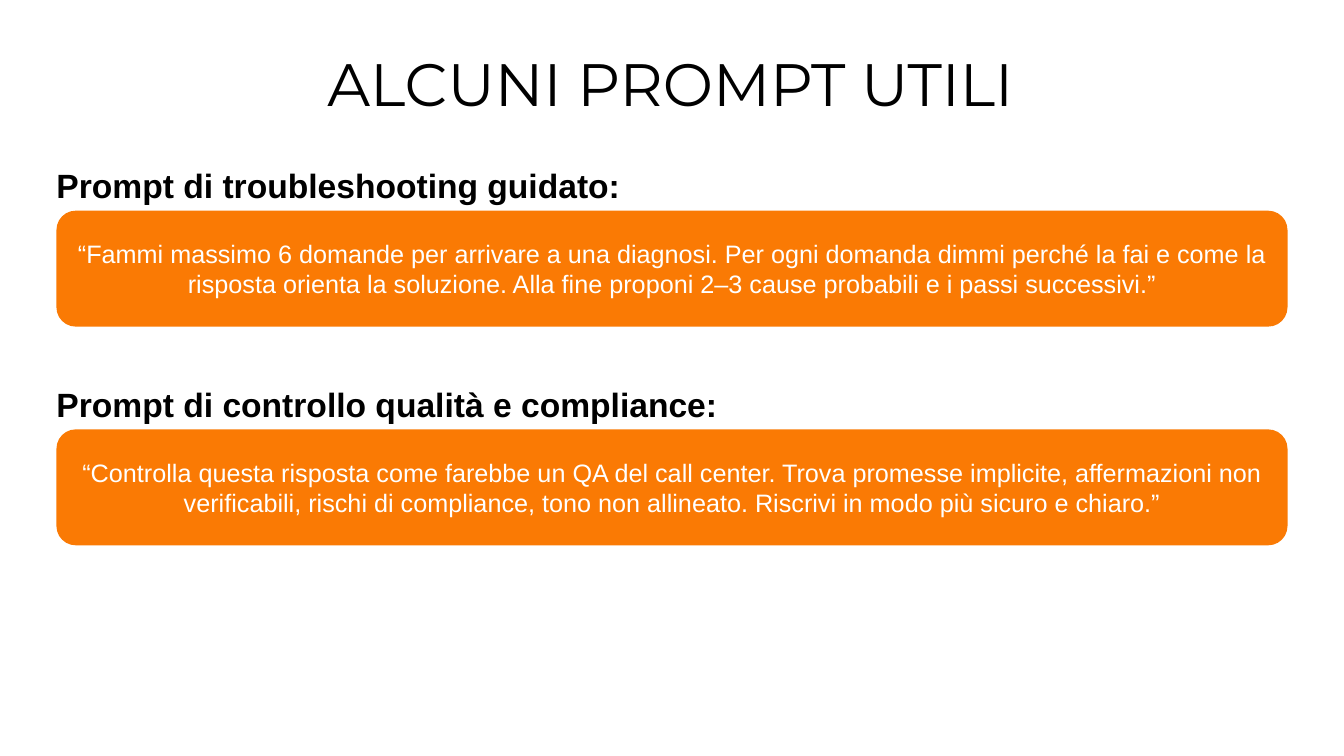
"""Build a slide with two useful prompts, each a heading above a rounded panel."""
import dataclasses

import pptx
import pptx.dml.color
import pptx.enum.shapes
import pptx.enum.text
import pptx.util

ALIGN = pptx.enum.text.PP_ALIGN
ANCHOR = pptx.enum.text.MSO_ANCHOR


@dataclasses.dataclass(frozen=True)
class Theme:
    """Colours, fonts and type sizes of the slide."""

    ink: str = "000000"
    paper: str = "FFFFFF"
    accent: str = "FA7A04"
    title_font: str = "Montserrat"
    body_font: str = "Arial"
    title_size: float = 42.7
    heading_size: float = 24
    prompt_size: float = 18


@dataclasses.dataclass(frozen=True)
class Grid:
    """Slide size, margins and row heights in inches."""

    width: float = 13.33
    height: float = 7.5
    left: float = 0.56
    content_width: float = 12.21
    first_row: float = 1.64
    row_step: float = 2.17
    heading_height: float = 0.45
    panel_height: float = 1.15


THEME = Theme()
GRID = Grid()
PROMPTS = [
    (
        "Prompt di troubleshooting guidato:",
        "“Fammi massimo 6 domande per arrivare a una diagnosi. Per ogni domanda "
        "dimmi perché la fai e come la risposta orienta la soluzione. Alla fine "
        "proponi 2–3 cause probabili e i passi successivi.”",
    ),
    (
        "Prompt di controllo qualità e compliance:",
        "“Controlla questa risposta come farebbe un QA del call center. Trova "
        "promesse implicite, affermazioni non verificabili, rischi di compliance, "
        "tono non allineato. Riscrivi in modo più sicuro e chiaro.”",
    ),
]


def inches(*lengths):
    """Convert lengths in inches to slide units."""
    return [pptx.util.Inches(length) for length in lengths]


def write_text(box, text, *, size, font=THEME.body_font, color=THEME.ink, bold=False,
               align=ALIGN.LEFT, anchor=ANCHOR.TOP, inset=0, line_spacing=None):
    """Fill a box with one formatted paragraph."""
    frame = box.text_frame
    frame.word_wrap = True
    frame.auto_size = pptx.enum.text.MSO_AUTO_SIZE.NONE
    frame.vertical_anchor = anchor
    frame.margin_left, frame.margin_right = inches(inset, inset)
    frame.margin_top, frame.margin_bottom = inches(inset / 2, inset / 2)
    para = frame.paragraphs[0]
    para.alignment = align
    para.line_spacing = line_spacing
    span = para.add_run()
    span.text = text
    span.font.name = font
    span.font.size = pptx.util.Pt(size)
    span.font.bold = bold
    span.font.color.rgb = pptx.dml.color.RGBColor.from_string(color)


def place_title(page, text):
    """Move the title placeholder and write the title."""
    title = page.shapes.title
    title.left, title.top, title.width, title.height = inches(0.84, 0.6, 11.62, 0.39)
    write_text(title, text, size=THEME.title_size, font=THEME.title_font,
               align=ALIGN.CENTER, line_spacing=0.8)


def add_heading(page, top, text):
    """Add a bold heading at the left margin."""
    heading = page.shapes.add_textbox(
        *inches(GRID.left, top, GRID.content_width, GRID.heading_height))
    write_text(heading, text, size=THEME.heading_size, bold=True)


def add_panel(page, top, text):
    """Add a rounded panel with a centred prompt."""
    panel = page.shapes.add_shape(
        pptx.enum.shapes.MSO_SHAPE.ROUNDED_RECTANGLE,
        *inches(GRID.left, top, GRID.content_width, GRID.panel_height))
    panel.shadow.inherit = False
    panel.fill.solid()
    panel.fill.fore_color.rgb = pptx.dml.color.RGBColor.from_string(THEME.accent)
    panel.line.fill.background()
    write_text(panel, text, size=THEME.prompt_size, color=THEME.paper,
               align=ALIGN.CENTER, anchor=ANCHOR.MIDDLE, inset=0.1)


def main():
    """Build and save the deck."""
    deck = pptx.Presentation()
    deck.slide_width, deck.slide_height = inches(GRID.width, GRID.height)
    page = deck.slides.add_slide(deck.slide_layouts.get_by_name("Title Only"))
    place_title(page, "ALCUNI PROMPT UTILI")
    for row, (heading, prompt) in enumerate(PROMPTS):
        top = GRID.first_row + row * GRID.row_step
        add_heading(page, top, heading)
        add_panel(page, top + GRID.heading_height, prompt)
    deck.save("out.pptx")


if __name__ == "__main__":
    main()
